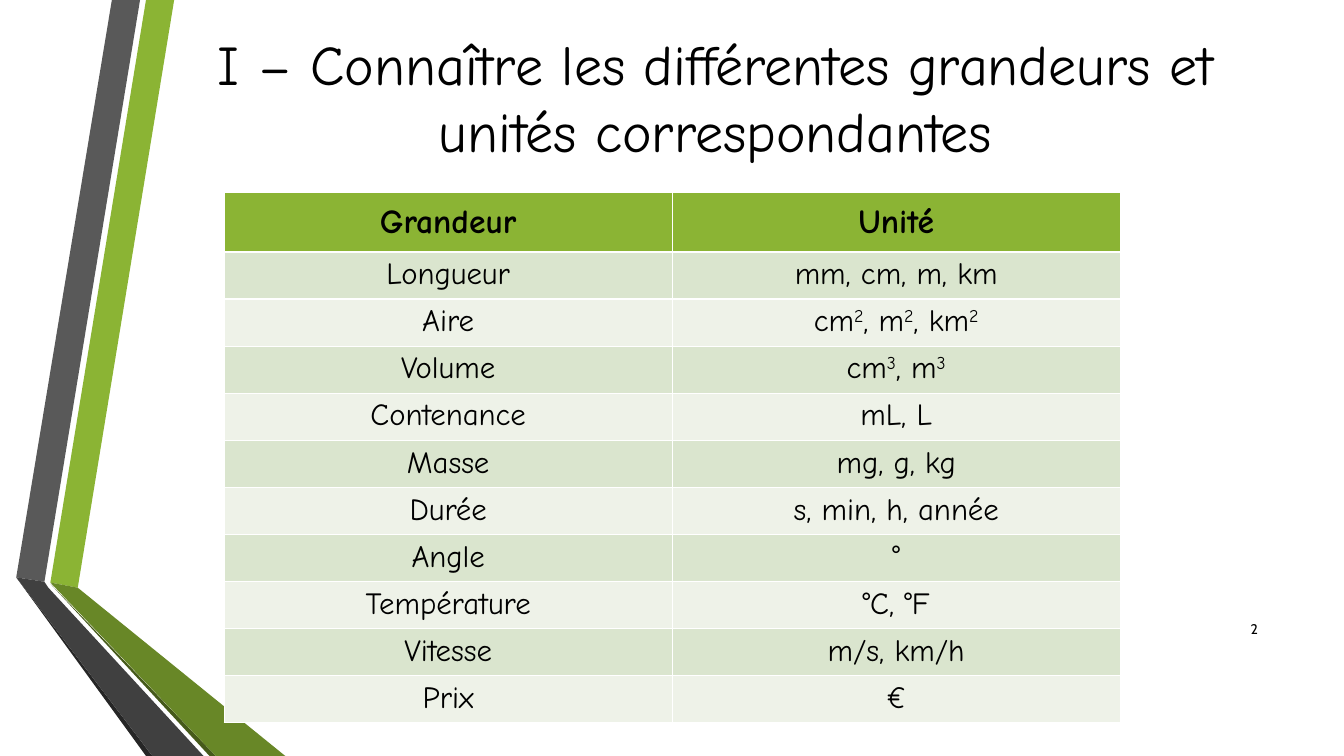
from dataclasses import dataclass

from pptx import Presentation
from pptx.dml.color import RGBColor
from pptx.enum.text import MSO_ANCHOR, MSO_AUTO_SIZE, PP_ALIGN
from pptx.util import Cm, Pt

CENTER, RIGHT = PP_ALIGN.CENTER, PP_ALIGN.RIGHT
MIDDLE, TOP = MSO_ANCHOR.MIDDLE, MSO_ANCHOR.TOP
NO_FIT = MSO_AUTO_SIZE.NONE

TITLE = "I – Connaître les différentes grandeurs et unités correspondantes"
PAGE = "2"
SUP = "|"
ROWS = [
    ("Grandeur", "Unité"),
    ("Longueur", "mm, cm, m, km"),
    ("Aire", "cm|2|, m|2|, km|2"),
    ("Volume", "cm|3|, m|3"),
    ("Contenance", "mL, L"),
    ("Masse", "mg, g, kg"),
    ("Durée", "s, min, h, année"),
    ("Angle", "°"),
    ("Température", "°C, °F"),
    ("Vitesse", "m/s, km/h"),
    ("Prix", "€"),
]


@dataclass(frozen=True)
class Theme:
    text: str = "000000"
    green: str = "8BB434"
    green_foot: str = "688727"
    green_edge: str = "465A1A"
    grey: str = "595959"
    grey_foot: str = "404040"
    grey_edge: str = "262626"
    bands: tuple = ("EEF2E8", "DAE5CE")
    font: str = "Comic Neue"
    page_font: str = "Cabin"
    title_size: int = 40
    head_size: int = 24
    body_size: int = 22
    page_size: int = 10


T = Theme()
WIDTH, HEIGHT = 33.87, 19.05
TITLE_BOX = (4.11, 0, 27.84, 4.88)
PAGE_BOX = (30.43, 15.34, 1.52, 1.02)
TABLE_LEFT, TABLE_TOP, COL_WIDTH = 5.65, 4.86, 11.29
HEAD_HEIGHT, ROW_HEIGHT = 1.49, 1.15
RIBBONS = [
    (T.green, [(1.27, 14.68), (1.96, 14.81), (4.39, 0), (3.68, 0)]),
    (T.grey, [(3.53, 0), (2.82, 0), (0.41, 14.55), (1.12, 14.66)]),
    (T.grey_edge, [(0.41, 14.55), (3.68, HEIGHT), (3.84, HEIGHT)]),
    (T.green_edge, [(1.27, 14.71), (5.28, HEIGHT), (5.44, HEIGHT)]),
    (T.green_foot, [(1.27, 14.68), (5.44, HEIGHT), (7.19, HEIGHT), (1.96, 14.81)]),
    (T.grey_foot, [(5.13, HEIGHT), (1.22, 14.81), (1.12, 14.66), (0.41, 14.55),
                   (3.84, HEIGHT)]),
]


def apply(obj, values):
    for name, value in values.items():
        setattr(obj, name, value)


def paint(fill, color):
    fill.solid()
    fill.fore_color.rgb = RGBColor.from_string(color)


def write(tf, text, size, align=CENTER, font=T.font, bold=False):
    p = tf.paragraphs[0]
    p.alignment = align
    for i, part in enumerate(text.split(SUP)):
        r = p.add_run()
        r.text = part
        apply(r.font, {"name": font, "size": Pt(size), "bold": bold})
        r.font.color.rgb = RGBColor.from_string(T.text)
        if i % 2:
            r.font._element.set("baseline", "30000")


def add_ribbon(slide, color, points):
    pts = [(Cm(x), Cm(y)) for x, y in points]
    builder = slide.shapes.build_freeform(*pts[0])
    builder.add_line_segments(pts[1:], close=True)
    sp = builder.convert_to_shape()
    sp.shadow.inherit = False
    paint(sp.fill, color)
    sp.line.fill.background()


def add_title(slide):
    sp = slide.shapes.title
    apply(sp, dict(zip(("left", "top", "width", "height"), map(Cm, TITLE_BOX))))
    apply(sp.text_frame, {"word_wrap": True, "auto_size": NO_FIT,
                          "vertical_anchor": MIDDLE})
    write(sp.text_frame, TITLE, T.title_size)


def add_page(slide):
    tf = slide.shapes.add_textbox(*map(Cm, PAGE_BOX)).text_frame
    apply(tf, {"word_wrap": True, "vertical_anchor": MIDDLE})
    write(tf, PAGE, T.page_size, RIGHT, T.page_font)


def add_units(slide):
    n_cols = len(ROWS[0])
    heights = [HEAD_HEIGHT] + [ROW_HEIGHT] * (len(ROWS) - 1)
    table = slide.shapes.add_table(
        len(ROWS), n_cols, Cm(TABLE_LEFT), Cm(TABLE_TOP),
        Cm(COL_WIDTH * n_cols), Cm(sum(heights))).table
    for i, (row, height) in enumerate(zip(ROWS, heights)):
        head = i == 0
        table.rows[i].height = Cm(height)
        for j, text in enumerate(row):
            cell = table.cell(i, j)
            cell.vertical_anchor = MIDDLE if head else TOP
            paint(cell.fill, T.green if head else T.bands[i % 2])
            write(cell.text_frame, text, T.head_size if head else T.body_size,
                  bold=head)


def main():
    prs = Presentation()
    apply(prs, {"slide_width": Cm(WIDTH), "slide_height": Cm(HEIGHT)})
    slide = prs.slides.add_slide(prs.slide_layouts[5])
    for color, points in RIBBONS:
        add_ribbon(slide, color, points)
    add_title(slide)
    add_page(slide)
    add_units(slide)
    prs.save("out.pptx")


if __name__ == "__main__":
    main()
